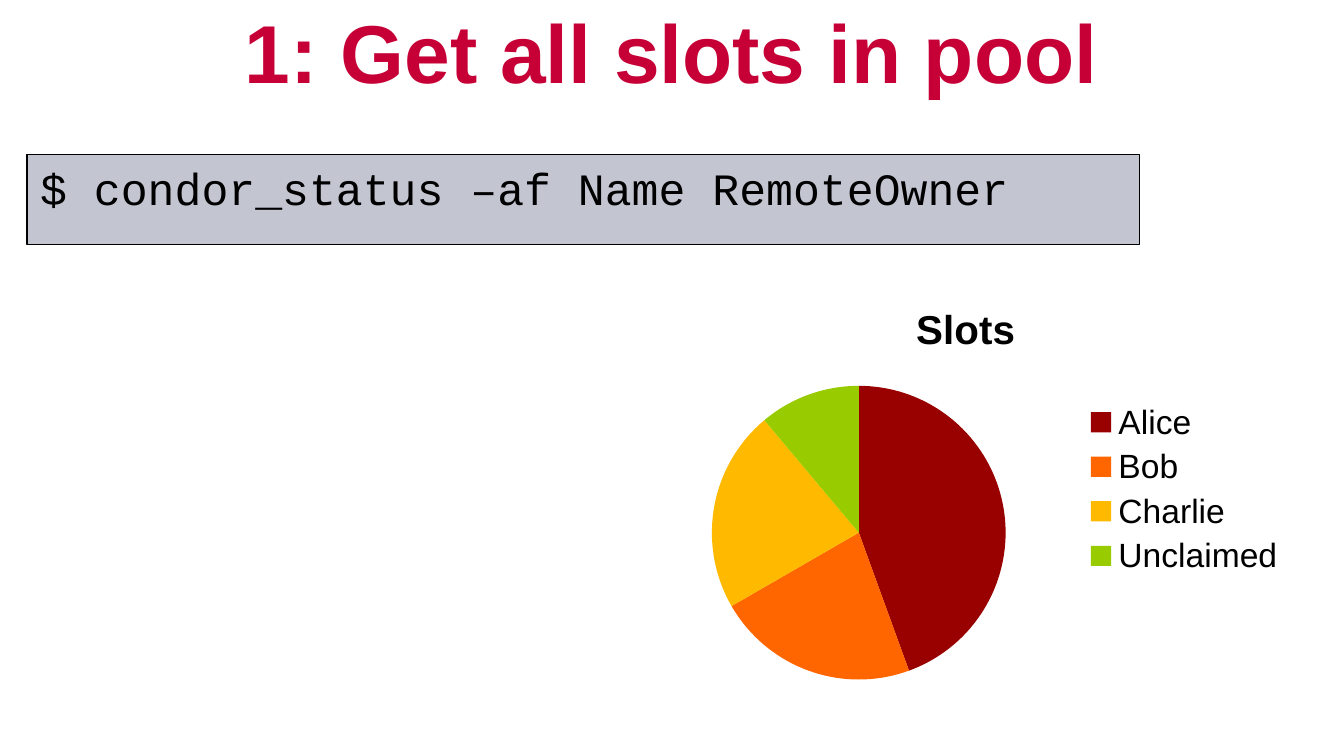
from dataclasses import dataclass

from lxml import etree
from pptx import Presentation
from pptx.chart.data import CategoryChartData
from pptx.dml.color import RGBColor
from pptx.enum.chart import XL_CHART_TYPE, XL_LEGEND_POSITION
from pptx.enum.shapes import MSO_SHAPE
from pptx.enum.text import MSO_ANCHOR, PP_ALIGN
from pptx.oxml.ns import qn
from pptx.util import Cm, Pt

PIE = XL_CHART_TYPE.PIE
LEGEND_RIGHT = XL_LEGEND_POSITION.RIGHT
RECTANGLE = MSO_SHAPE.RECTANGLE
TOP, MIDDLE = MSO_ANCHOR.TOP, MSO_ANCHOR.MIDDLE
LEFT, CENTER = PP_ALIGN.LEFT, PP_ALIGN.CENTER

BLANK_LAYOUT = 6
TITLE_FORMAT = {"name": "Arial", "size": Pt(44), "bold": True}
CODE_FORMAT = {"name": "Courier New", "size": Pt(24), "bold": False}
CHART_FORMAT = {"name": "Arial", "size": Pt(18), "bold": False}
CHART_TITLE_FORMAT = {"name": "Arial", "size": Pt(21.6), "bold": True}
PLOT_AREA = {"x": 0.12, "y": 0.25, "w": 0.44, "h": 0.71}


@dataclass
class Slice:
    owner: str
    slots: int
    color: str


SLICES = [
    Slice("Alice", 44, "990000"),
    Slice("Bob", 22, "FF6600"),
    Slice("Charlie", 22, "FFBA00"),
    Slice("Unclaimed", 11, "99CC00"),
]


def color(value: str) -> RGBColor:
    return RGBColor.from_string(value)


def format_font(font, values: dict, font_color: str) -> None:
    for name, value in values.items():
        setattr(font, name, value)
    font.color.rgb = color(font_color)


def write_text(box, text: str, values: dict, font_color: str, align, anchor) -> None:
    frame = box.text_frame
    frame.word_wrap = True
    frame.vertical_anchor = anchor
    para = frame.paragraphs[0]
    para.alignment = align
    span = para.add_run()
    span.text = text
    format_font(span.font, values, font_color)


def place_plot(chart, fractions: dict) -> None:
    """Fix the inner plot area at fractions of the chart's size."""
    plot_area = chart.plots[0]._element.getparent()
    layout = plot_area.find(qn("c:layout"))
    if layout is None:
        layout = etree.Element(qn("c:layout"))
        plot_area.insert(0, layout)
    manual = etree.SubElement(layout, qn("c:manualLayout"))
    settings = {"layoutTarget": "inner", "xMode": "edge", "yMode": "edge", **fractions}
    for name, value in settings.items():
        etree.SubElement(manual, qn(f"c:{name}"), val=str(value))


def add_title(page) -> None:
    box = page.shapes.add_textbox(0, 0, Cm(25.4), Cm(1.9))
    write_text(box, "1: Get all slots in pool", TITLE_FORMAT, "C60036", CENTER, MIDDLE)


def add_command(page) -> None:
    box = page.shapes.add_shape(RECTANGLE, Cm(0.51), Cm(2.92), Cm(21.03), Cm(1.7))
    box.shadow.inherit = False
    box.fill.solid()
    box.fill.fore_color.rgb = color("C3C5D1")
    box.line.color.rgb = color("000000")
    box.line.width = Pt(0.75)
    write_text(box, "$ condor_status –af Name RemoteOwner",
               CODE_FORMAT, "000000", LEFT, TOP)


def add_slots_chart(page, slices: list[Slice]) -> None:
    data = CategoryChartData()
    data.categories = [part.owner for part in slices]
    data.add_series("Slots", [part.slots for part in slices])
    chart = page.shapes.add_chart(
        PIE, Cm(11.94), Cm(5.31), Cm(12.62), Cm(7.87), data).chart
    format_font(chart.font, CHART_FORMAT, "000000")

    chart.has_title = True
    title = chart.chart_title.text_frame
    title.text = "Slots"
    format_font(title.paragraphs[0].runs[0].font, CHART_TITLE_FORMAT, "000000")
    chart.has_legend = True
    chart.legend.position = LEGEND_RIGHT
    chart.legend.include_in_layout = False

    plot = chart.plots[0]
    plot.vary_by_categories = True
    for index, part in enumerate(slices):
        fill = plot.series[0].points[index].format.fill
        fill.solid()
        fill.fore_color.rgb = color(part.color)
    place_plot(chart, PLOT_AREA)


def main() -> None:
    deck = Presentation()
    deck.slide_width, deck.slide_height = Cm(25.4), Cm(14.29)
    page = deck.slides.add_slide(deck.slide_layouts[BLANK_LAYOUT])
    add_title(page)
    add_command(page)
    add_slots_chart(page, SLICES)
    deck.save("out.pptx")


if __name__ == "__main__":
    main()
